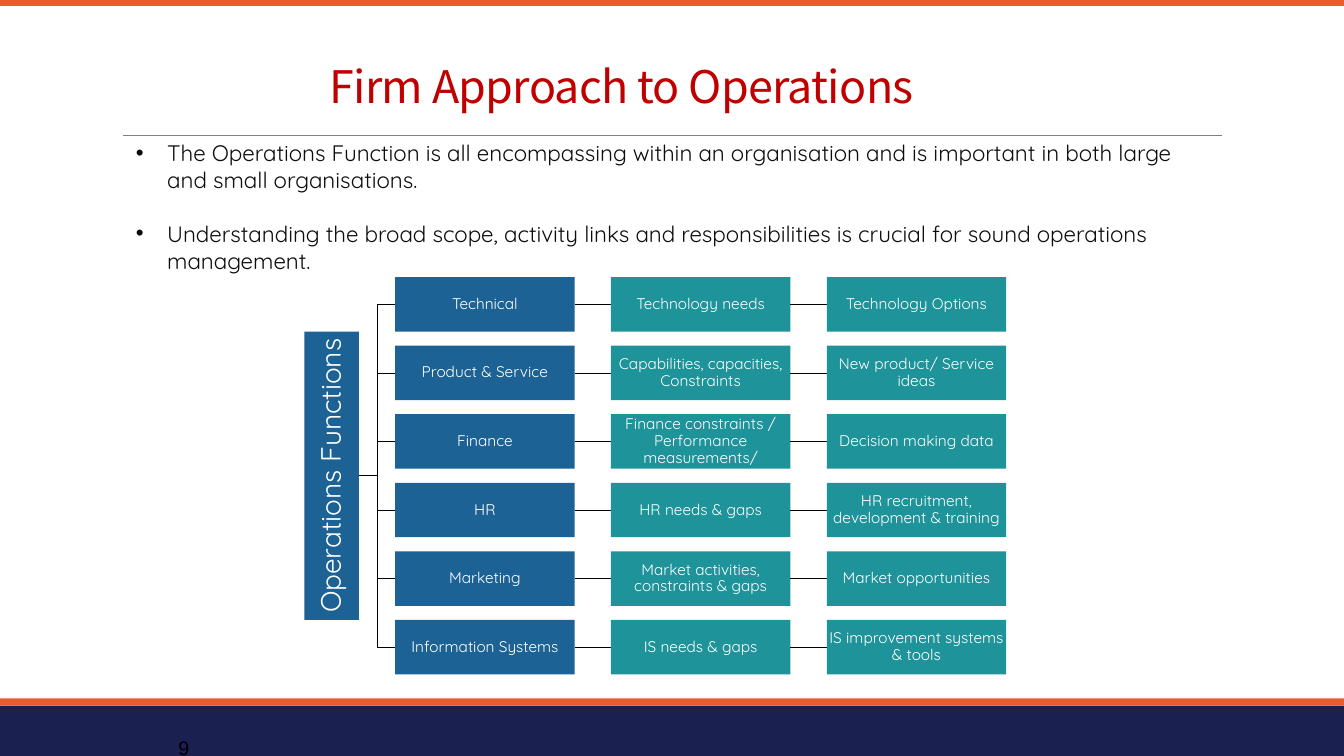
from lxml.etree import SubElement
from pptx import Presentation
from pptx.dml.color import RGBColor
from pptx.enum.shapes import MSO_CONNECTOR as Conn, MSO_SHAPE as Kind
from pptx.enum.text import MSO_ANCHOR as Anchor, PP_ALIGN as Align
from pptx.oxml.ns import qn
from pptx.util import Pt

SCALE = 9144
NAVY, CORAL, BLUE, TEAL = "1A2150", "EC5A32", "1D6294", "1E9399"
BLACK, WHITE = "000000", "FFFFFF"
SANS = "Quicksand"
POINTS = [
    "The Operations Function is all encompassing within an organisation and is important in both large and small organisations.",
    "Understanding the broad scope, activity links and responsibilities is crucial for sound operations management.",
]
ROWS = [
    ("Technical", "Technology needs", "Technology Options"),
    ("Product & Service", "Capabilities, capacities, Constraints", "New product/ Service ideas"),
    ("Finance", "Finance constraints / Performance measurements/", "Decision making data"),
    ("HR", "HR needs & gaps", "HR recruitment, development & training"),
    ("Marketing", "Market activities, constraints & gaps", "Market opportunities"),
    ("Information Systems", "IS needs & gaps", "IS improvement systems & tools"),
]


def px(*nums):
    """Turn px lengths into EMU."""
    return [n * SCALE for n in nums]


def rgb(code):
    """Turn a hex string into a colour."""
    return RGBColor.from_string(code)


def put(item, **vals):
    """Set attributes from a dict of values."""
    for key, val in vals.items():
        setattr(item, key, val)


def write(para, text, size, tint, face=SANS):
    """Add one run of styled text and return it."""
    run = para.add_run()
    run.text = text
    put(run.font, size=Pt(size), name=face)
    run.font.color.rgb = rgb(tint)
    return run


def block(slide, box, fill):
    """Draw a plain filled rectangle."""
    shape = slide.shapes.add_shape(Kind.RECTANGLE, *px(*box))
    shape.shadow.inherit = False
    shape.fill.solid()
    shape.fill.fore_color.rgb = rgb(fill)
    shape.line.fill.background()
    return shape


def label(slide, box, fill, text, size=11):
    """Draw a filled rectangle with centred white text."""
    shape = block(slide, box, fill)
    frame = shape.text_frame
    put(frame, word_wrap=True, vertical_anchor=Anchor.MIDDLE,
        **dict.fromkeys(("margin_left", "margin_right", "margin_top", "margin_bottom"), SCALE))
    para = frame.paragraphs[0]
    put(para, alignment=Align.CENTER, line_spacing=0.9)
    write(para, text, size, WHITE)
    return shape


def rule(slide, ends, tint=BLACK):
    """Draw a thin straight line."""
    line = slide.shapes.add_connector(Conn.STRAIGHT, *px(*ends))
    line.line.color.rgb = rgb(tint)
    line.line.width = Pt(0.5)
    SubElement(line._element.spPr, qn("a:effectLst"))


def elbow(slide, left, top, right, end):
    """Draw a thin bent line that turns halfway across."""
    mid = (left + right) // 2
    pen = slide.shapes.build_freeform(left, top, scale=SCALE)
    pen.add_line_segments([(mid, top), (mid, end), (right, end)], close=False)
    shape = pen.convert_to_shape()
    shape.shadow.inherit = False
    shape.fill.background()
    shape.line.color.rgb = rgb(BLACK)
    shape.line.width = Pt(0.5)


def note(slide, box, anchor=Anchor.TOP):
    """Add a wrapping text box and return its frame."""
    frame = slide.shapes.add_textbox(*px(*box)).text_frame
    put(frame, word_wrap=True, vertical_anchor=anchor)
    return frame


def bands(slide, wide, high):
    """Draw the top and bottom bands and the title rule."""
    block(slide, (0, high - 50, wide, 50), NAVY)
    block(slide, (0, high - 57, wide, 7), CORAL)
    rule(slide, (122, 134, 1212, 134), "808080")
    block(slide, (0, -1, wide, 7), CORAL)


def title(slide, box):
    """Write the slide title."""
    para = note(slide, box, Anchor.BOTTOM).paragraphs[0]
    para.line_spacing = 0.85
    run = write(para, "Firm Approach to Operations", 32, "C00000", "Noto Sans CJK TC")
    props = run._r.get_or_add_rPr()
    props.set("spc", "-50")
    SubElement(props, qn("a:ea")).set("typeface", "Noto Sans CJK TC")


def bullets(slide, box):
    """Write the bullet points."""
    frame = note(slide, box)
    for i, text in enumerate(POINTS):
        para = frame.add_paragraph() if i else frame.paragraphs[0]
        props = para._p.get_or_add_pPr()
        props.set("marL", str(31 * SCALE))
        props.set("indent", str(-31 * SCALE))
        if i:
            para.space_before = Pt(19.3)
        SubElement(props, qn("a:buFont")).set("typeface", "Arial")
        SubElement(props, qn("a:buChar")).set("char", "•")
        write(para, text, 16, "0D0D0D")


def chart(slide, box):
    """Draw the tree of operations functions."""
    left, top, wide, high = box
    cell, gap, tall = 178, 36, 54
    step = (high - tall) // (len(ROWS) - 1)
    mid = top + high // 2
    start = left + tall + gap
    for i, row in enumerate(ROWS):
        y = top + i * step
        axis = y + tall // 2
        elbow(slide, left + tall, mid, start, axis)
        for j, text in enumerate(row):
            x = start + j * (cell + gap)
            if j:
                rule(slide, (x - gap, axis, x, axis))
            label(slide, (x, y, cell, tall), TEAL if j else BLUE, text)
    span = 286
    root = (left + (tall - span) // 2, mid - tall // 2, span, tall)
    label(slide, root, BLUE, "Operations Functions", 20).rotation = 270


def number(slide, box):
    """Write the page number."""
    write(note(slide, box).paragraphs[0], "9", 14, BLACK, "Arial")


def main():
    """Build the slide and save it."""
    deck = Presentation()
    wide, high = 1333, 750
    put(deck, slide_width=wide * SCALE, slide_height=high * SCALE)
    slide = deck.slides.add_slide(deck.slide_layouts[6])
    bands(slide, wide, high)
    bullets(slide, (125, 133, 1083, 145))
    number(slide, (167, 725, 42, 34))
    chart(slide, (302, 275, 696, 394))
    title(slide, (317, 0, 850, 117))
    deck.save("out.pptx")


if __name__ == "__main__":
    main()
